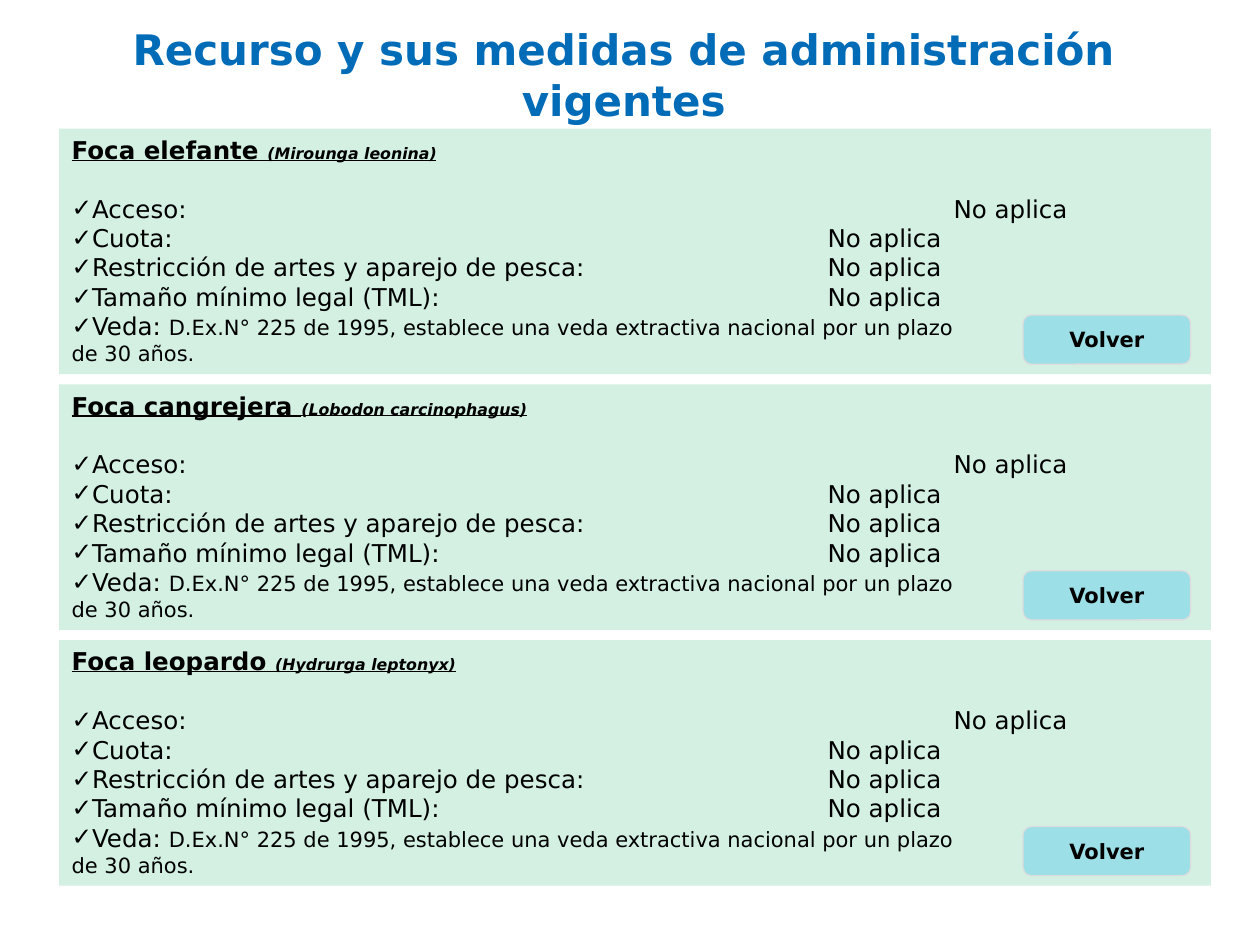
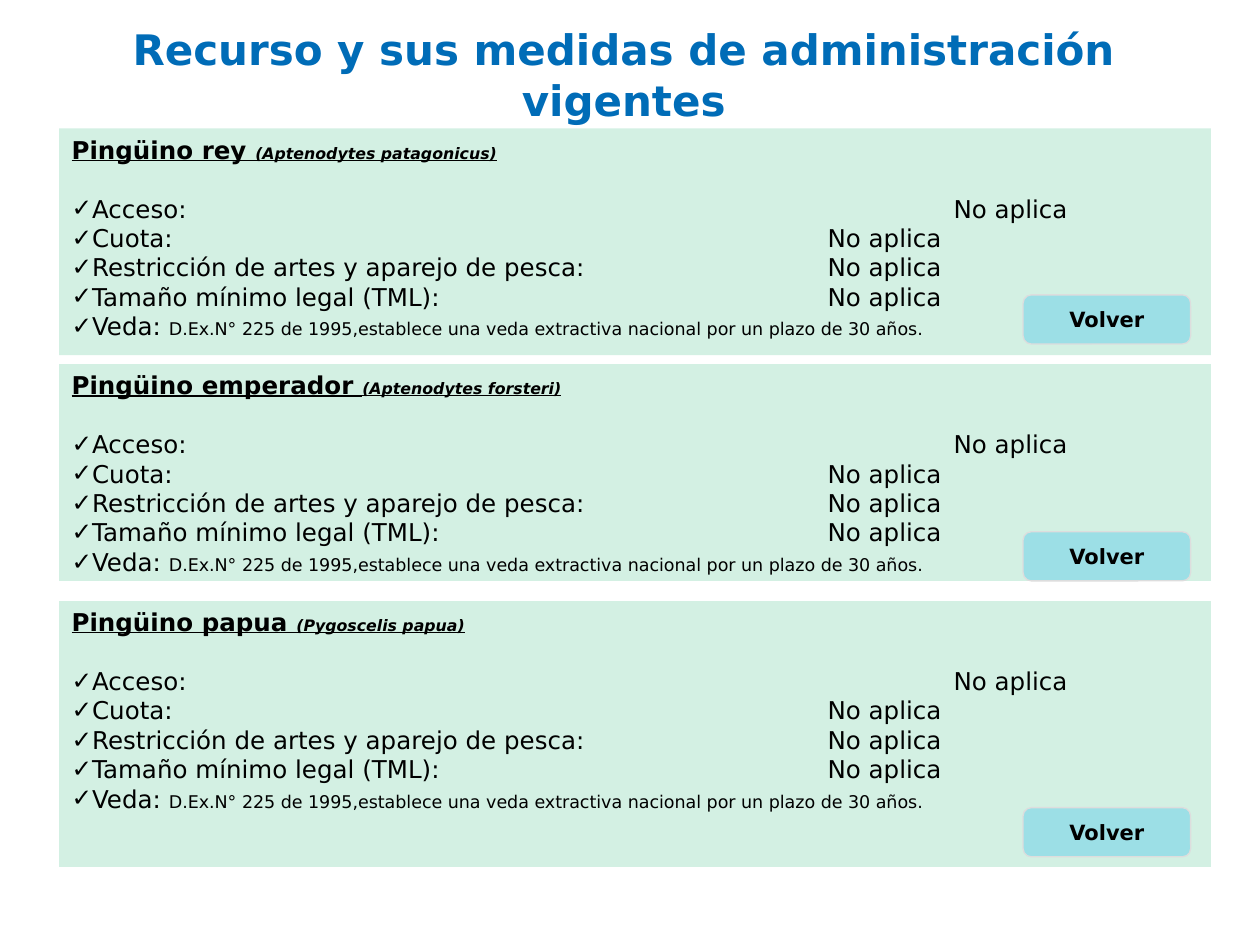
from pptx import Presentation
from pptx.dml.color import RGBColor
from pptx.enum.shapes import MSO_SHAPE
from pptx.enum.text import MSO_ANCHOR, MSO_AUTO_SIZE, PP_ALIGN
from pptx.oxml.ns import qn
from pptx.util import Inches, Pt
from lxml.etree import SubElement

# Shared style
FONT = "DejaVu Sans"
BLUE = RGBColor(0x00, 0x6C, 0xB7)
GREEN = RGBColor(0xAA, 0xE2, 0xCA)
CYAN = RGBColor(0x00, 0xB0, 0xF0)
GREY = RGBColor(0xDD, 0xDD, 0xDD)
BLACK = RGBColor(0, 0, 0)
LEAD = 1.2

# Content
TITLE = "Recurso y sus medidas de administración vigentes"
BACK = "Volver"
NONE = "No aplica"
RULES = [  # label, tab stop of its value
    ("Acceso:", 7),
    ("Cuota:", 6),
    ("Restricción de artes y aparejo de pesca:", 6),
    ("Tamaño mínimo legal (TML):", 6),
]
SLIDES = [
    {
        "ban": ["D.Ex.N° 225 de 1995, establece una veda extractiva nacional por un plazo",
                "de 30 años."],
        "size": 12,
        "panels": [  # name, species, top, height, button top
            ("Foca elefante ", "(Mirounga leonina)", 1.02, 1.95, 2.5),
            ("Foca cangrejera ", "(Lobodon carcinophagus)", 3.05, 1.95, 4.53),
            ("Foca leopardo ", "(Hydrurga leptonyx)", 5.08, 1.95, 6.56),
        ],
    },
    {
        "ban": ["D.Ex.N° 225 de 1995,establece una veda extractiva nacional por un plazo de 30 años."],
        "size": 10,
        "panels": [
            ("Pingüino rey ", "(Aptenodytes patagonicus)", 1.02, 1.8, 2.34),
            ("Pingüino emperador ", "(Aptenodytes forsteri)", 2.89, 1.72, 4.22),
            ("Pingüino papua ", "(Pygoscelis papua)", 4.77, 2.11, 6.41),
        ],
    },
]


def write(par, text, size=14, color=BLACK, **style):
    """Add one run; style takes bold, italic and underline."""
    run = par.add_run()
    run.text = text
    font = run.font
    font.name, font.size, font.color.rgb = FONT, Pt(size), color
    for key, value in style.items():
        setattr(font, key, value)


def lay(par, size=14, align=PP_ALIGN.JUSTIFY, gap=0):
    par.alignment = align
    par.line_spacing = Pt(size * LEAD)
    par.space_before = Pt(gap)
    par.space_after = Pt(0)


def check(par, stop=None):
    """Give a paragraph its check mark and, if asked, a tab stop in inches."""
    props = par._p.get_or_add_pPr()
    props.set("marL", "0")
    props.set("indent", "0")
    SubElement(props, qn("a:buFont"), typeface=FONT)
    SubElement(props, qn("a:buChar"), char="✓")
    if stop:
        tabs = SubElement(props, qn("a:tabLst"))
        SubElement(tabs, qn("a:tab"), pos=str(Inches(stop)), algn="l")


def block(slide, kind, box, color, alpha):
    """Draw a see-through shape and return it with its text frame."""
    shape = slide.shapes.add_shape(kind, *map(Inches, box))
    shape.shadow.inherit = False
    shape.fill.solid()
    shape.fill.fore_color.rgb = color
    tint = shape.fill._xPr.find(".//" + qn("a:srgbClr"))
    SubElement(tint, qn("a:alpha"), val=str(alpha * 1000))
    shape.line.fill.background()
    shape.text_frame.word_wrap = True
    return shape, shape.text_frame


def add_panel(slide, name, species, top, high, ban, size):
    _, frame = block(slide, MSO_SHAPE.RECTANGLE, (0.47, top, 9.14, high), GREEN, 51)
    frame.vertical_anchor = MSO_ANCHOR.TOP
    head = frame.paragraphs[0]
    lay(head)
    write(head, name, bold=True, underline=True)
    write(head, species, size=9, bold=True, italic=True, underline=True)

    # Measures, set one line below the name
    for i, (label, stop) in enumerate(RULES):
        par = frame.add_paragraph()
        lay(par, gap=0 if i else 14 * LEAD)
        check(par, stop)
        write(par, f"{label}\t{NONE}")

    # Ban
    par = frame.add_paragraph()
    lay(par)
    check(par)
    write(par, "Veda: ")
    write(par, ban[0], size=size)
    for text in ban[1:]:
        par = frame.add_paragraph()
        lay(par, size)
        write(par, text, size=size)


def add_button(slide, top):
    shape, frame = block(slide, MSO_SHAPE.ROUNDED_RECTANGLE, (8.12, top, 1.33, 0.39), CYAN, 26)
    shape.line.color.rgb = GREY
    shape.line.width = Pt(0.75)
    frame.vertical_anchor = MSO_ANCHOR.MIDDLE
    par = frame.paragraphs[0]
    par.alignment = PP_ALIGN.CENTER
    write(par, BACK, size=12, bold=True)


def add_title(slide):
    title = slide.shapes.title
    title.left, title.top, title.width, title.height = map(Inches, (0.7, 0.08, 8.5, 1.02))
    frame = title.text_frame
    frame.word_wrap = True
    frame.auto_size = MSO_AUTO_SIZE.NONE
    frame.vertical_anchor = MSO_ANCHOR.MIDDLE
    par = frame.paragraphs[0]
    lay(par, 24, PP_ALIGN.CENTER)
    write(par, TITLE, size=24, color=BLUE, bold=True)


def main():
    deck = Presentation()
    deck.slide_width, deck.slide_height = Inches(10), Inches(7.5)
    for page in SLIDES:
        slide = deck.slides.add_slide(deck.slide_layouts[5])
        add_title(slide)
        for name, species, top, high, spot in page["panels"]:
            add_panel(slide, name, species, top, high, page["ban"], page["size"])
            add_button(slide, spot)
    deck.save("out.pptx")


if __name__ == "__main__":
    main()
